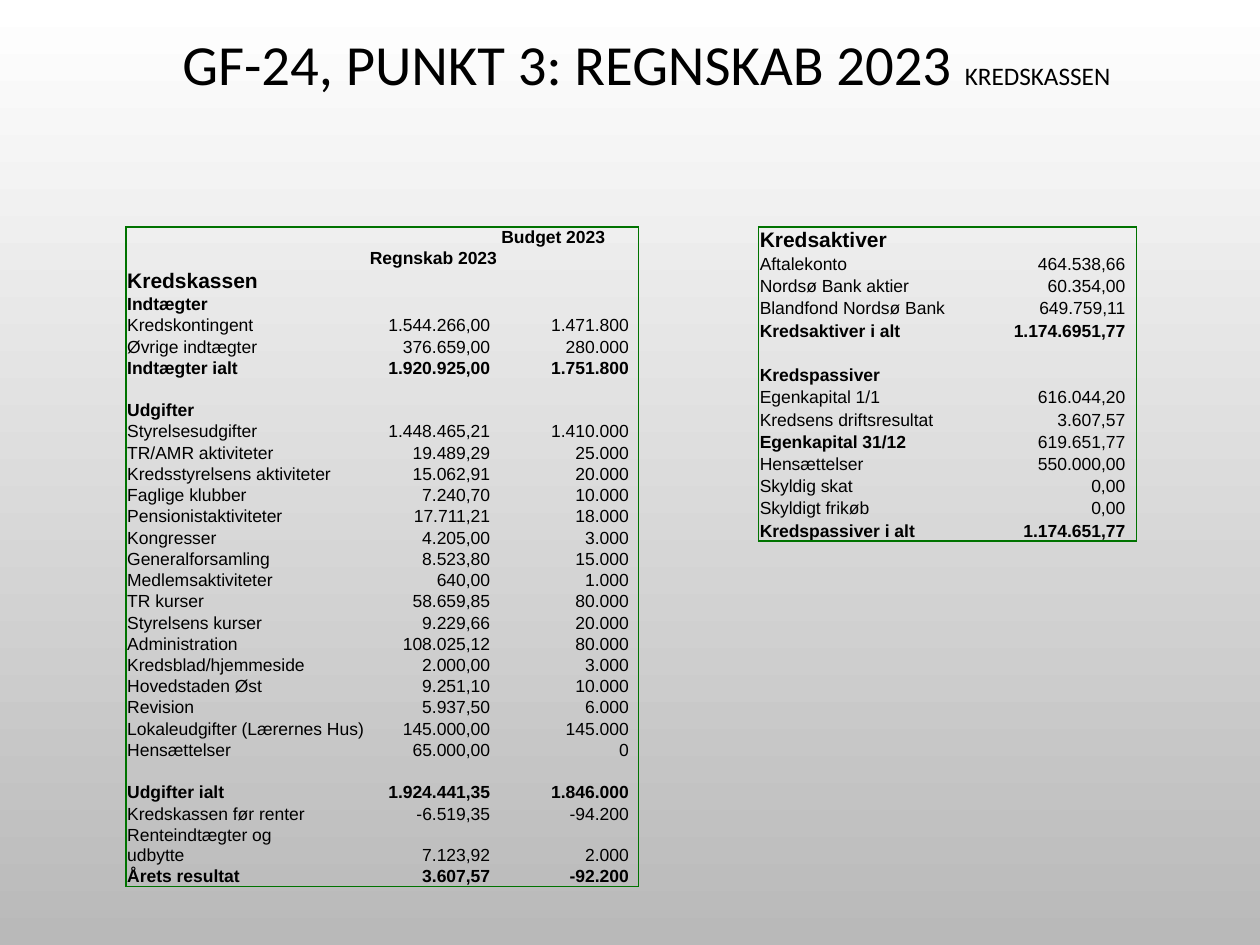
from lxml.etree import SubElement as Sub
from pptx import Presentation
from pptx.dml.color import RGBColor as RGB
from pptx.enum.text import MSO_ANCHOR as Anchor, MSO_AUTO_SIZE as Auto, PP_ALIGN as Align
from pptx.oxml.ns import qn
from pptx.util import Inches, Pt

BLACK = RGB(0x00, 0x00, 0x00)
WHITE = RGB(0xFF, 0xFF, 0xFF)
GREY = RGB(0xB9, 0xB9, 0xB9)
GREEN = RGB(0x00, 0x73, 0x00)
PLAIN = "{2D5ABB26-0587-4C30-8999-92F81FD0307C}"  # no style, no grid

# Rows are label, then amounts; an empty tuple is a blank row
FUNDS = [
    ("", "Regnskab 2023", "Budget 2023"),
    ("Kredskassen",),
    ("Indtægter",),
    ("Kredskontingent", "1.544.266,00", "1.471.800"),
    ("Øvrige indtægter", "376.659,00", "280.000"),
    ("Indtægter ialt", "1.920.925,00", "1.751.800"),
    (),
    ("Udgifter",),
    ("Styrelsesudgifter", "1.448.465,21", "1.410.000"),
    ("TR/AMR aktiviteter", "19.489,29", "25.000"),
    ("Kredsstyrelsens aktiviteter", "15.062,91", "20.000"),
    ("Faglige klubber", "7.240,70", "10.000"),
    ("Pensionistaktiviteter", "17.711,21", "18.000"),
    ("Kongresser", "4.205,00", "3.000"),
    ("Generalforsamling", "8.523,80", "15.000"),
    ("Medlemsaktiviteter", "640,00", "1.000"),
    ("TR kurser", "58.659,85", "80.000"),
    ("Styrelsens kurser", "9.229,66", "20.000"),
    ("Administration", "108.025,12", "80.000"),
    ("Kredsblad/hjemmeside", "2.000,00", "3.000"),
    ("Hovedstaden Øst", "9.251,10", "10.000"),
    ("Revision", "5.937,50", "6.000"),
    ("Lokaleudgifter (Lærernes Hus)", "145.000,00", "145.000"),
    ("Hensættelser", "65.000,00", "0"),
    (),
    ("Udgifter ialt", "1.924.441,35", "1.846.000"),
    ("Kredskassen før renter", "-6.519,35", "-94.200"),
    ("Renteindtægter og udbytte", "7.123,92", "2.000"),
    ("Årets resultat", "3.607,57", "-92.200"),
]
ASSETS = [
    ("Kredsaktiver",),
    ("Aftalekonto", "464.538,66"),
    ("Nordsø Bank aktier", "60.354,00"),
    ("Blandfond Nordsø Bank", "649.759,11"),
    ("Kredsaktiver i alt", "1.174.6951,77"),
    (),
    ("Kredspassiver",),
    ("Egenkapital 1/1", "616.044,20"),
    ("Kredsens driftsresultat", "3.607,57"),
    ("Egenkapital 31/12", "619.651,77"),
    ("Hensættelser", "550.000,00"),
    ("Skyldig skat", "0,00"),
    ("Skyldigt frikøb", "0,00"),
    ("Kredspassiver i alt", "1.174.651,77"),
]
HEADS = {"Kredskassen", "Kredsaktiver"}
TOTALS = {"Indtægter ialt", "Udgifter ialt", "Årets resultat",
          "Kredsaktiver i alt", "Kredspassiver i alt"}
BOLD = HEADS | TOTALS | {"Indtægter", "Udgifter", "Kredspassiver", "Egenkapital 31/12"}


def add_run(para, text, size, font, bold=False):
    run = para.add_run()
    run.text = text
    run.font.size, run.font.name, run.font.bold = Pt(size), font, bold
    run.font.color.rgb = BLACK


def paint_back(slide):
    fill = slide.background.fill
    fill.gradient()
    fill.gradient_angle = 270
    for stop, color, place in zip(fill.gradient_stops, (WHITE, GREY), (0, 1)):
        stop.color.rgb, stop.position = color, place


def add_title(slide):
    title = slide.shapes.title
    title.left, title.top = Inches(0.67), Inches(0.24)
    title.width, title.height = Inches(8.92), Inches(1.08)
    frame = title.text_frame
    frame.auto_size, frame.vertical_anchor = Auto.NONE, Anchor.TOP
    para = frame.paragraphs[0]
    para.alignment, para.line_spacing = Align.CENTER, 0.9
    add_run(para, "GF-24, PUNKT 3: REGNSKAB 2023 ", 32.4, "Calibri")
    add_run(para, "KREDSKASSEN", 14.4, "Calibri")


def set_cell(cell, text, size, bold, align, right):
    cell.margin_left = cell.margin_top = Inches(0.01)
    cell.margin_right, cell.margin_bottom = Inches(right), 0
    cell.vertical_anchor = Anchor.BOTTOM
    cell.fill.background()
    para = cell.text_frame.paragraphs[0]
    para.alignment = align
    if text:
        add_run(para, text, size, "Arial", bold)
    else:  # keeps an empty cell as low as its row
        end = Sub(para._p, qn("a:endParaRPr"), sz="800")
        Sub(end, qn("a:latin"), typeface="Arial")


def add_edges(cell, sides):
    props = cell._tc.get_or_add_tcPr()
    for place, side in enumerate(sides):
        line = props.makeelement(qn(f"a:ln{side}"), {"w": str(Pt(1))})
        fill = Sub(line, qn("a:solidFill"))
        Sub(fill, qn("a:srgbClr"), val=str(GREEN))
        props.insert(place, line)


def add_sheet(slide, left, widths, rows, pitch, right):
    """Table of labels and right-aligned amounts; column 1 is a gap."""
    count, last = len(rows), len(widths) - 1
    frame = slide.shapes.add_table(count, last + 1, Inches(left), Inches(1.8),
                                   Inches(sum(widths)), Pt(pitch * count))
    table = frame.table
    table.first_row = table.horz_banding = False
    frame._element.find(".//" + qn("a:tableStyleId")).text = PLAIN
    for col, width in zip(table.columns, widths):
        col.width = Inches(width)
    for r, row in enumerate(rows):
        label, *sums = row or ("",)
        head = r == 0 and not label
        table.rows[r].height = Pt(14.4 if label in HEADS else pitch)
        texts = [label, "", *sums] + [""] * (last - 1 - len(sums))
        for c, text in enumerate(texts):
            cell = table.cell(r, c)
            size = 12 if label in HEADS else 10
            bold = head or label in TOTALS or (c == 0 and label in BOLD)
            align = Align.LEFT if c < 2 else Align.CENTER if head else Align.RIGHT
            set_cell(cell, text, size, bold, align, 0.01 if c < 2 or head else right)
            tests = (("L", c == 0), ("R", c == last), ("T", r == 0), ("B", r == count - 1))
            add_edges(cell, [side for side, hit in tests if hit])
    return table


def main():
    prs = Presentation()
    prs.slide_width, prs.slide_height = Inches(10), Inches(7.5)
    slide = prs.slides.add_slide(prs.slide_layouts[5])
    paint_back(slide)
    add_title(slide)

    # Income and costs, with two taller rows and one wide label
    funds = add_sheet(slide, 1, (1.64, 0.27, 1.06, 1.1), FUNDS, 12.15, 0.08)
    names = [row[0] if row else "" for row in FUNDS]
    for tall in (0, names.index("Renteindtægter og udbytte")):
        funds.rows[tall].height = Pt(23.5)
    wide = names.index("Lokaleudgifter (Lærernes Hus)")
    funds.cell(wide, 0).merge(funds.cell(wide, 1))
    budget = funds.cell(0, 3)
    budget.vertical_anchor = Anchor.TOP
    budget.text_frame.paragraphs[0].alignment = Align.LEFT

    # Assets and debts
    add_sheet(slide, 6.02, (1.71, 0.23, 1.06), ASSETS, 12.72, 0.09)
    prs.save("out.pptx")


if __name__ == "__main__":
    main()
